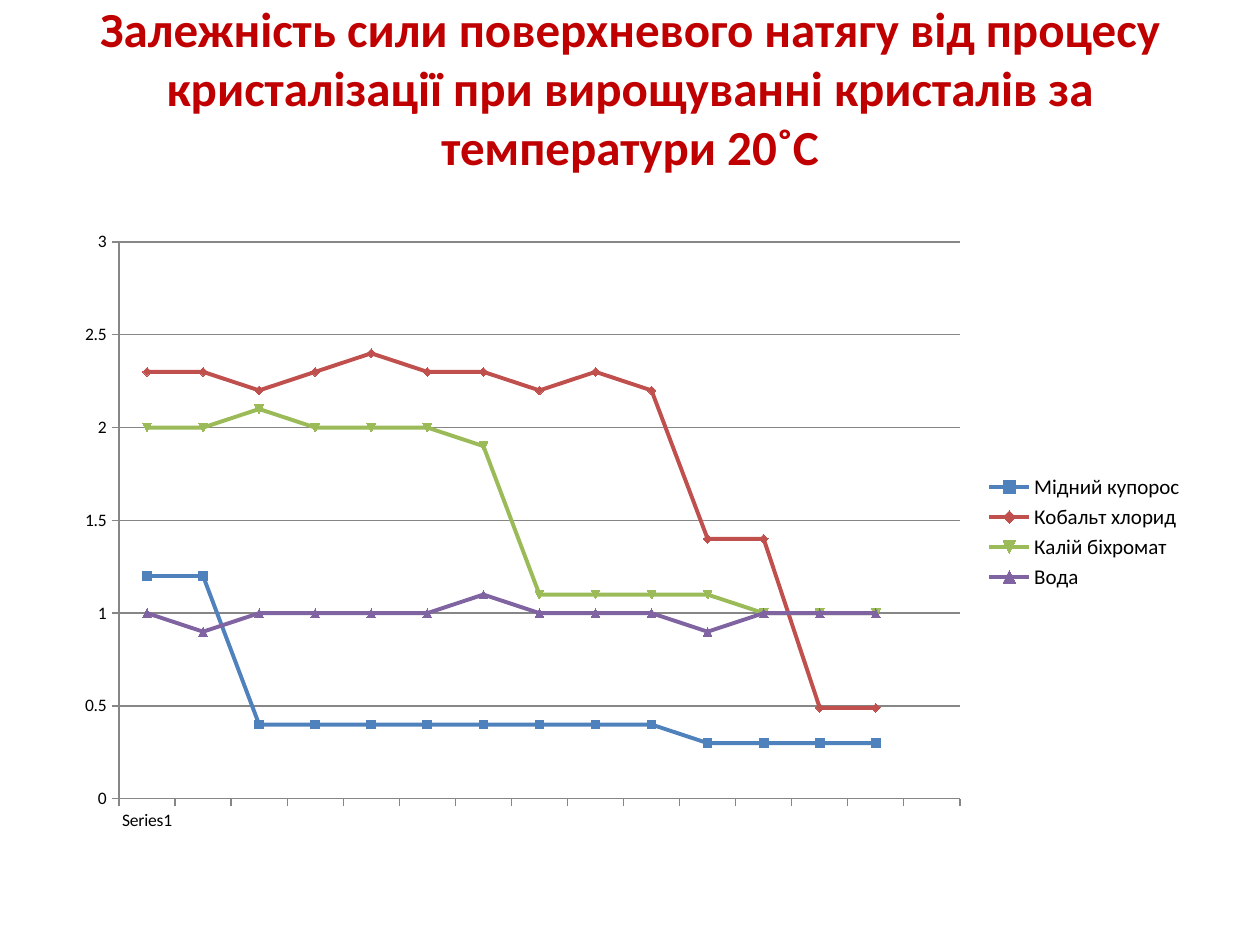
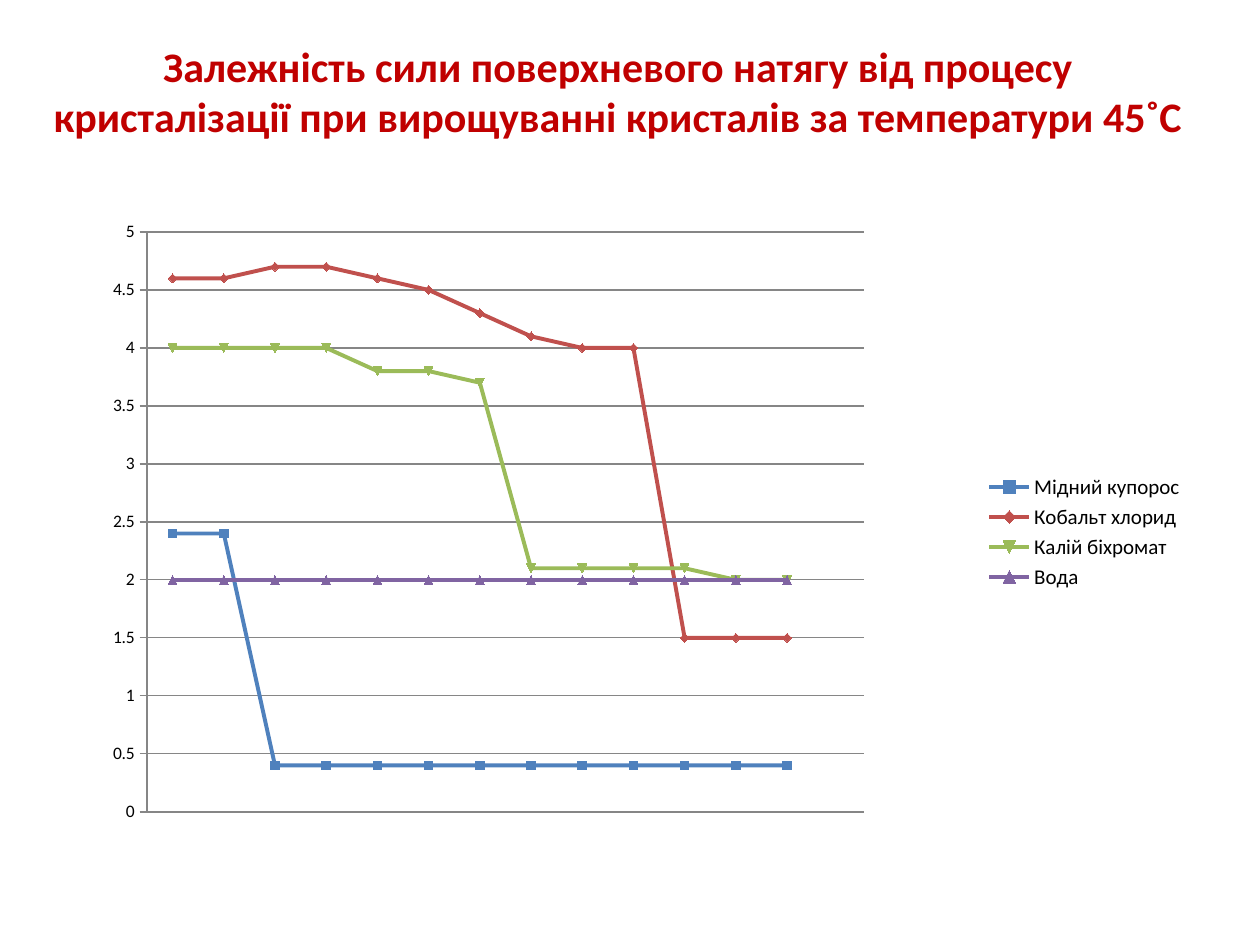
from lxml import etree
from pptx import Presentation
from pptx.chart.data import CategoryChartData
from pptx.dml.color import RGBColor
from pptx.enum.chart import XL_CHART_TYPE, XL_LEGEND_POSITION, XL_TICK_MARK
from pptx.enum.text import MSO_ANCHOR, PP_ALIGN
from pptx.oxml.ns import qn
from pptx.util import Pt

SCALE = 914400 / 126
FONT = "Calibri"
RED, BLACK, GRAY = "C00000", "000000", "868686"
LINES = XL_CHART_TYPE.LINE_MARKERS
RIGHT = XL_LEGEND_POSITION.RIGHT
OUT = XL_TICK_MARK.OUTSIDE
MIDDLE, CENTER = MSO_ANCHOR.MIDDLE, PP_ALIGN.CENTER

CHART_BOX = (63, 220, 1134, 624)
SERIES = (
    ("Мідний купорос", "4F81BD"),
    ("Кобальт хлорид", "C0504D"),
    ("Калій біхромат", "9BBB59"),
    ("Вода", "8064A2"),
)
TITLE = ("Залежність сили поверхневого натягу від процесу кристалізації "
         "при вирощуванні кристалів за температури {}˚С")

COOL = (
    [1.2] * 2 + [0.4] * 8 + [0.3] * 4,
    [2.3, 2.3, 2.2, 2.3, 2.4, 2.3, 2.3, 2.2, 2.3, 2.2, 1.4, 1.4, 0.49, 0.49],
    [2, 2, 2.1, 2, 2, 2, 1.9] + [1.1] * 4 + [1] * 3,
    [1, 0.9, 1, 1, 1, 1, 1.1, 1, 1, 1, 0.9, 1, 1, 1],
)
WARM = (
    [2.4] * 2 + [0.4] * 11,
    [4.6, 4.6, 4.7, 4.7, 4.6, 4.5, 4.3, 4.1, 4, 4] + [1.5] * 3,
    [4] * 4 + [3.8, 3.8, 3.7] + [2.1] * 4 + [2] * 2,
    [2] * 13,
)


def px(size):
    """Turn pixels into EMU."""
    return round(size * SCALE)


def tint(code):
    """Turn a hex string into a colour."""
    return RGBColor.from_string(code)


def style(font, size, color=BLACK, bold=False):
    """Set the face, size and colour of a font."""
    font.name, font.size, font.bold = FONT, Pt(size), bold
    font.color.rgb = tint(color)


def add_title(slide, text, box, size):
    """Add a centred red heading with one line of room below it."""
    frame = slide.shapes.add_textbox(*map(px, box)).text_frame
    frame.word_wrap = True
    frame.vertical_anchor = MIDDLE
    frame.margin_bottom = px(size * 2.1 + 8)
    frame.text = text
    line = frame.paragraphs[0]
    line.alignment = CENTER
    style(line.runs[0].font, size, RED, True)


def set_plot(chart, area):
    """Place the inner plot area, given in px from the chart corner."""
    plot = chart._chartSpace.chart.plotArea
    for old in plot.findall(qn("c:layout")):
        plot.remove(old)
    layout = etree.Element(qn("c:layout"))
    manual = etree.SubElement(layout, qn("c:manualLayout"))
    parts = [("layoutTarget", "inner"), ("xMode", "edge"), ("yMode", "edge")]
    wide, high = CHART_BOX[2:]
    for name, size, whole in zip("xywh", area, (wide, high) * 2):
        parts.append((name, size / whole))
    for name, value in parts:
        etree.SubElement(manual, qn("c:" + name)).set("val", str(value))
    plot.insert(0, layout)


def set_axes(chart, top, labels):
    """Style both axes, with a category axis only if it is labelled."""
    cats, vals = chart.category_axis, chart.value_axis
    cats.visible = labels
    cats.has_major_gridlines = False
    vals.minimum_scale, vals.maximum_scale, vals.major_unit = 0, top, 0.5
    vals.has_major_gridlines = True
    vals.tick_labels.number_format = "General"
    vals.tick_labels.number_format_is_linked = False
    lines = [vals.major_gridlines.format.line]
    for axis in (cats, vals):
        axis.major_tick_mark = OUT
        style(axis.tick_labels.font, 10)
        lines.append(axis.format.line)
    for line in lines:
        line.color.rgb = tint(GRAY)
        line.width = Pt(0.75)


def add_lines(slide, cats, rows, top, area, labels):
    """Add a line chart with markers and a legend on the right."""
    data = CategoryChartData()
    data.categories = cats
    for (name, _), row in zip(SERIES, rows):
        data.add_series(name, row + [None])
    chart = slide.shapes.add_chart(LINES, *map(px, CHART_BOX), data).chart
    style(chart.font, 10)
    chart.has_title = False
    chart.has_legend = True
    chart.legend.position = RIGHT
    chart.legend.include_in_layout = False
    style(chart.legend.font, 12)
    chart.plots[0].vary_by_categories = False
    for item, (_, color) in zip(chart.plots[0].series, SERIES):
        item.smooth = False
        item.format.line.width = Pt(2.25)
        item.format.line.color.rgb = tint(color)
        mark = item.marker.format
        mark.fill.solid()
        mark.fill.fore_color.rgb = tint(color)
        mark.line.color.rgb = tint(color)
    set_axes(chart, top, labels)
    set_plot(chart, area)


def main():
    """Build both slides and save them."""
    deck = Presentation()
    deck.slide_width, deck.slide_height = px(1260), px(945)
    blank = deck.slide_layouts[6]

    cool = deck.slides.add_slide(blank)
    add_title(cool, TITLE.format(20), (63, 38, 1134, 158), 28)
    add_lines(cool, ["Series1"] + [""] * 14, COOL, 3,
              (56, 22, 841, 557), True)

    warm = deck.slides.add_slide(blank)
    add_title(warm, TITLE.format(45), (39, 38, 1158, 158), 24)
    add_lines(warm, [str(n) for n in range(1, 15)], WARM, 5,
              (84, 12, 717, 580), False)

    deck.save("out.pptx")


if __name__ == "__main__":
    main()
